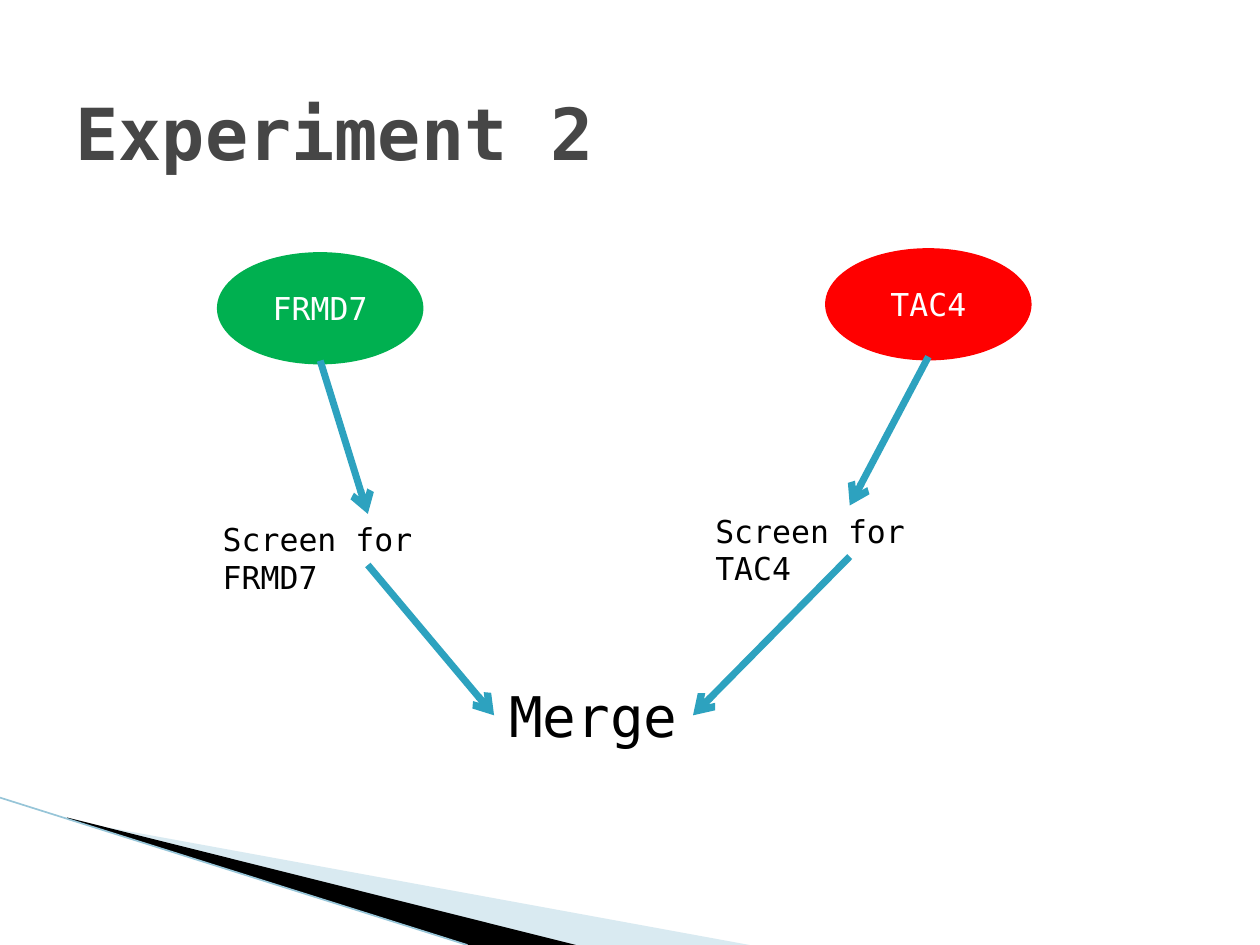
import pptx
import pptx.dml.color
import pptx.enum.shapes
import pptx.enum.text
import pptx.oxml
import pptx.oxml.ns
import pptx.util
from lxml import etree

Cm = pptx.util.Cm
Pt = pptx.util.Pt
PP_ALIGN = pptx.enum.text.PP_ALIGN
ANCHOR = pptx.enum.text.MSO_ANCHOR
SHAPES = pptx.enum.shapes.MSO_SHAPE

FONT = "DejaVu Sans Mono"
ARROW_COLOUR = "2DA2BF"
TITLE = ("Experiment 2", (1.27, 1.07, 22.86, 3.17))
MERGE = ("Merge", (9.96, 13.61, 4.01, 1.62))
GENE_SIZE = (4.01, 2.11)
BRANCHES = [
    {"gene": "TAC4", "colour": "FF0000", "gene_at": (16.71, 5.08),
     "screen": "Screen for TAC4", "screen_box": (14.17, 10.19, 5.92, 1.03),
     "merge_side": 1},
    {"gene": "FRMD7", "colour": "00B050", "gene_at": (4.45, 5.16),
     "screen": "Screen for FRMD7", "screen_box": (4.24, 10.36, 6.35, 1.03),
     "merge_side": 0},
]
WEDGES = [
    ("A0CBDC", 40, [(1.4, 16.54), (15.11, 19.05), (11.58, 19.05), (1.4, 16.51)]),
    ("000000", 100, [(1.35, 16.48), (11.61, 19.05), (9.45, 19.05), (1.37, 16.51)]),
]
EDGE = ("97C5D8", 0.95, (0, 16.08), (9.42, 19.05))


def rgb(colour):
    return pptx.dml.color.RGBColor.from_string(colour)


def lengths(values):
    return [Cm(value) for value in values]


def point(box, across, down):
    left, top, width, height = box
    return left + width * across, top + height * down


def write(frame, text, size, colour, align, bold=False):
    paragraph = frame.paragraphs[0]
    paragraph.alignment = align
    run = paragraph.add_run()
    run.text = text
    run.font.name = FONT
    run.font.size = Pt(size)
    run.font.bold = bold
    run.font.color.rgb = rgb(colour)


def add_wedge(slide, colour, opacity, corners):
    start, *others = [lengths(corner) for corner in corners]
    builder = slide.shapes.build_freeform(*start)
    builder.add_line_segments(others, close=True)
    wedge = builder.convert_to_shape()
    wedge.shadow.inherit = False
    wedge.fill.solid()
    wedge.fill.fore_color.rgb = rgb(colour)
    wedge.line.fill.background()
    if opacity < 100:
        tint = wedge.fill._xPr.find(".//" + pptx.oxml.ns.qn("a:srgbClr"))
        alpha = etree.SubElement(tint, pptx.oxml.ns.qn("a:alpha"))
        alpha.set("val", str(opacity * 1000))


def add_line(slide, colour, weight, start, end, arrow=False):
    line = slide.shapes.add_connector(
        pptx.enum.shapes.MSO_CONNECTOR.STRAIGHT, *lengths(start + end))
    line.line.color.rgb = rgb(colour)
    line.line.width = Pt(weight)
    if arrow:
        tail = etree.SubElement(line.line._get_or_add_ln(), pptx.oxml.ns.qn("a:tailEnd"))
        tail.set("type", "arrow")
    etree.SubElement(line._element.spPr, pptx.oxml.ns.qn("a:effectLst"))


def add_gene(slide, text, colour, box):
    gene = slide.shapes.add_shape(SHAPES.FLOWCHART_CONNECTOR, *lengths(box))
    gene.shadow.inherit = False
    gene.fill.solid()
    gene.fill.fore_color.rgb = rgb(colour)
    gene.line.color.rgb = rgb(colour)
    gene.line.width = Pt(4.33)
    gene.text_frame.vertical_anchor = ANCHOR.MIDDLE
    write(gene.text_frame, text, 18, "FFFFFF", PP_ALIGN.CENTER)


def add_label(slide, text, size, box, align):
    frame = slide.shapes.add_textbox(*lengths(box)).text_frame
    frame.word_wrap = True
    frame.auto_size = pptx.enum.text.MSO_AUTO_SIZE.SHAPE_TO_FIT_TEXT
    write(frame, text, size, "000000", align)


def main():
    deck = pptx.Presentation()
    deck.slide_width, deck.slide_height = Cm(25.4), Cm(19.05)
    slide = deck.slides.add_slide(deck.slide_layouts[5])

    for wedge in WEDGES:
        add_wedge(slide, *wedge)
    add_line(slide, *EDGE)

    heading, heading_box = TITLE
    title = slide.shapes.title
    title.left, title.top, title.width, title.height = lengths(heading_box)
    title.text_frame.vertical_anchor = ANCHOR.MIDDLE
    write(title.text_frame, heading, 41, "464646", PP_ALIGN.LEFT, bold=True)

    merge, merge_box = MERGE
    for branch in BRANCHES:
        gene_box = branch["gene_at"] + GENE_SIZE
        screen_box = branch["screen_box"]
        add_gene(slide, branch["gene"], branch["colour"], gene_box)
        add_line(slide, ARROW_COLOUR, 4, point(gene_box, 0.5, 1),
                 point(screen_box, 0.5, 0), arrow=True)
        add_line(slide, ARROW_COLOUR, 4, point(screen_box, 0.5, 1),
                 point(merge_box, branch["merge_side"], 0.5), arrow=True)
        add_label(slide, branch["screen"], 18, screen_box, PP_ALIGN.LEFT)
    add_label(slide, merge, 32, merge_box, PP_ALIGN.CENTER)

    deck.save("out.pptx")


if __name__ == "__main__":
    main()
